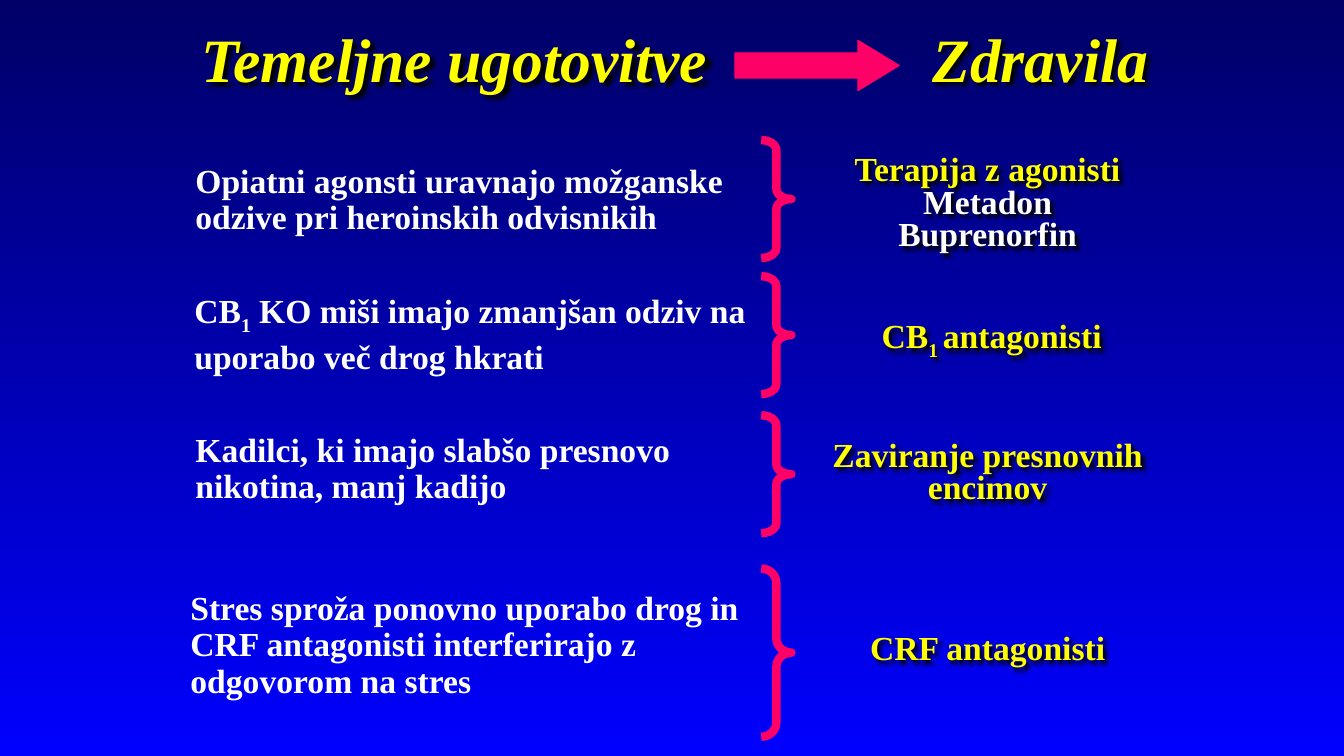
from dataclasses import dataclass

from lxml.etree import fromstring
from pptx import Presentation
from pptx.dml.color import RGBColor as RGB
from pptx.enum.shapes import MSO_SHAPE as Shape
from pptx.enum.text import MSO_ANCHOR as Anchor, MSO_AUTO_SIZE as Fit, PP_ALIGN as Align
from pptx.oxml.ns import nsdecls
from pptx.util import Inches, Pt


@dataclass(frozen=True)
class Theme:
    font: str = "Times New Roman"
    title: int = 44
    body: int = 24
    yellow: RGB = RGB(0xFF, 0xFF, 0x00)
    white: RGB = RGB(0xFF, 0xFF, 0xFF)
    pink: RGB = RGB(0xFF, 0x00, 0x66)
    night: RGB = RGB(0x00, 0x00, 0x66)
    blue: RGB = RGB(0x00, 0x00, 0xFF)


theme = Theme()
SHADOW = (
    f'<a:effectLst {nsdecls("a")}><a:outerShdw blurRad="38100" dist="38100" dir="2700000">'
    '<a:srgbClr val="000000"/></a:outerShdw></a:effectLst>'
)


def write(box, lines, size, align, wrap=True, italic=None):
    """Fill box with (text, colour, spacing) lines; text between underscores is subscript."""
    frame = box.text_frame
    frame.word_wrap = wrap
    frame.auto_size = Fit.SHAPE_TO_FIT_TEXT
    frame.vertical_anchor = Anchor.TOP
    for i, (text, color, space) in enumerate(lines):
        para = frame.add_paragraph() if i else frame.paragraphs[0]
        para.alignment = align
        para.line_spacing = space
        para.space_before = Pt(0)
        font = para.font
        font.name, font.size = theme.font, Pt(size)
        font.bold, font.italic = True, italic
        font.color.rgb = color
        for j, part in enumerate(text.split("_")):
            run = para.add_run()
            run.text = part
            if j % 2:
                run._r.get_or_add_rPr().set("baseline", "-25000")


def place(box, left, top, width, height):
    box.left, box.top = Inches(left), Inches(top)
    box.width, box.height = Inches(width), Inches(height)


deck = Presentation()
deck.slide_width, deck.slide_height = Inches(13.33), Inches(7.5)
slide = deck.slides.add_slide(deck.slide_layouts[5])
shapes = slide.shapes

back = slide.background.fill
back.gradient()
back.gradient_angle = 270
for stop, color, pos in zip(back.gradient_stops, (theme.night, theme.blue), (0, 1)):
    stop.color.rgb, stop.position = color, pos

# Heading: findings lead to drugs
title = shapes.title
drugs = shapes.add_textbox(0, 0, 0, 0)
heads = [
    (title, "Temeljne ugotovitve", 1.9, 5.27, Align.LEFT),
    (drugs, "Zdravila", 9.14, 2.36, Align.CENTER),
]
for box, text, left, width, align in heads:
    place(box, left, 0.33, width, 0.66)
    write(box, [(text, theme.yellow, 0.75)], theme.title, align, False, True)
    box._element.spPr.append(fromstring(SHADOW))

arrow = shapes.add_shape(Shape.RIGHT_ARROW, Inches(7.29), Inches(0.4), Inches(1.63), Inches(0.5))
arrow.adjustments[1] = 0.82
arrow.shadow.inherit = False
arrow.fill.solid()
arrow.fill.fore_color.rgb = theme.pink
arrow.line.color.rgb = theme.pink
arrow.line.width = Pt(0.75)

# Each row: finding (left, top, height, spacing, text), brace (top, height, curve),
# drug (top, height, lines)
rows = [
    ((1.84, 1.58, 0.83, 0.9, "Opiatni agonsti uravnajo možganske odzive pri heroinskih odvisnikih"),
     (1.39, 1.17, 0.33),
     (1.42, 1.15, [("Terapija z agonisti", theme.yellow, 1.0),
                   ("Metadon", theme.white, 0.8),
                   ("Buprenorfin", theme.white, 0.8)])),
    ((1.83, 2.83, 0.91, 1.0, "CB_1_ KO miši imajo zmanjšan odziv na uporabo več drog hkrati"),
     (2.74, 1.17, 0.33),
     (3.08, 0.5, [("CB_1 _antagonisti", theme.yellow, 1.0)])),
    ((1.84, 4.25, 0.83, 0.9, "Kadilci, ki imajo slabšo presnovo nikotina, manj kadijo"),
     (4.12, 1.17, 0.33),
     (4.33, 0.75, [("Zaviranje presnovnih encimov", theme.yellow, 0.8)])),
    ((1.79, 5.82, 1.19, 0.9,
      "Stres sproža ponovno uporabo drog in CRF antagonisti interferirajo z odgovorom na stres"),
     (5.64, 1.67, 0.47),
     (6.17, 0.5, [("CRF antagonisti", theme.yellow, 1.0)])),
]
for (left, top, height, space, text), (peak, span, curve), (high, tall, lines) in rows:
    fact = shapes.add_textbox(0, 0, 0, 0)
    place(fact, left, top, 5.8, height)
    write(fact, [(text, theme.white, space)], theme.body, Align.LEFT)

    brace = shapes.add_shape(Shape.RIGHT_BRACE, Inches(7.55), Inches(peak), Inches(0.3), Inches(span))
    brace.adjustments[0] = curve
    brace.shadow.inherit = False
    brace.fill.background()
    brace.line.color.rgb = theme.pink
    brace.line.width = Pt(6)

    drug = shapes.add_textbox(0, 0, 0, 0)
    right = 11.67
    start = 8 if "_" in lines[0][0] else 7.92
    place(drug, start, high, right - start, tall)
    write(drug, lines, theme.body, Align.CENTER)
    drug._element.spPr.append(fromstring(SHADOW))

deck.save("out.pptx")
